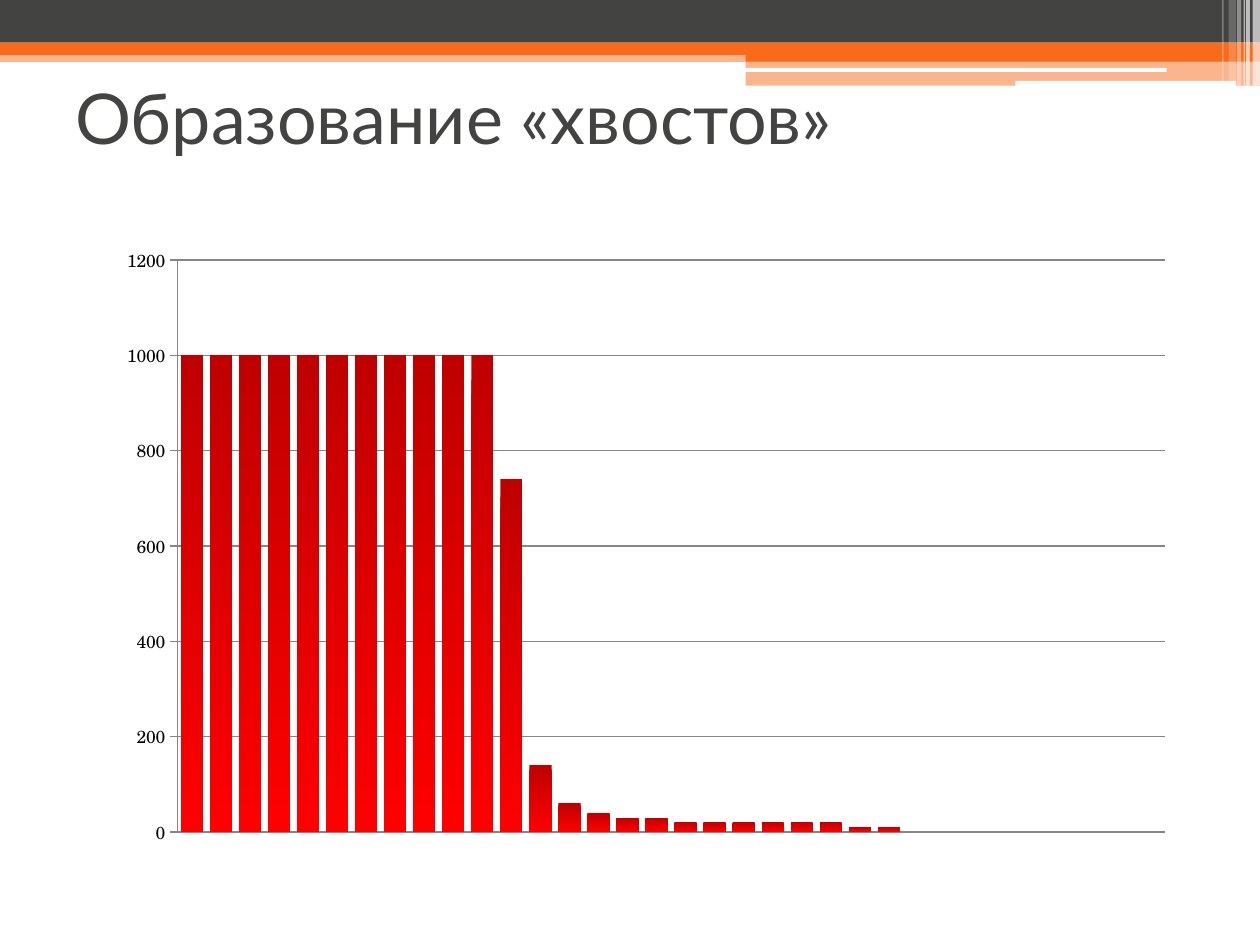
"""Build a slide with a banded header, a title and a long-tail column chart."""
from dataclasses import dataclass

import lxml.etree
import pptx
import pptx.chart.data
import pptx.dml.color
import pptx.enum.chart
import pptx.enum.shapes
import pptx.enum.text
import pptx.oxml
import pptx.oxml.ns
import pptx.util

Cm = pptx.util.Cm
qn = pptx.oxml.ns.qn

COLORS = {
    "dark": "434342",
    "orange": "F96A1B",
    "white": "FFFFFF",
    "black": "000000",
    "grid": "868686",
    "bar_top": "C00000",
    "bar_bottom": "FF0000",
}
SLIDE_WIDTH, SLIDE_HEIGHT = 25.4, 19.05
PANEL_LEFT = 15.03
PANEL_WIDTH = SLIDE_WIDTH - PANEL_LEFT
TITLE_FONT, CHART_FONT = "Lato", "TeX Gyre Schola"
VALUES = [1000] * 11 + [740, 140, 60, 40, 30, 30] + [20] * 6 + [10] * 2 + [0] * 9
PLOT_PERCENT = {"x": 9.2, "y": 5.6, "w": 88, "h": 83.3}


@dataclass
class Band:
    left: float
    top: float
    width: float
    height: float
    color: str
    opacity: int = 100
    rounded: bool = False


BANDS = [
    Band(0, 1.02, SLIDE_WIDTH, 0.23, "orange", 50),
    Band(0, 0, SLIDE_WIDTH, 0.86, "dark"),
    Band(0, 0.86, SLIDE_WIDTH, 0.25, "orange"),
    Band(PANEL_LEFT, 0.99, PANEL_WIDTH, 0.25, "orange"),
    Band(PANEL_LEFT, 1.22, PANEL_WIDTH, 0.51, "orange", 50),
    Band(15.01, 1.37, 8.51, 0.08, "white", rounded=True),
    Band(20.47, 1.63, 4.45, 0.1, "white", rounded=True),
    Band(25.25, 0, 0.15, 1.73, "white", 65),
    Band(25.12, 0, 0.08, 1.73, "white", 65),
    Band(25.07, 0, 0.03, 1.73, "white", 60),
    Band(24.94, 0, 0.08, 1.73, "white", 40),
    Band(24.77, 0, 0.15, 1.63, "white", 20),
    Band(24.64, 0, 0.03, 1.63, "white", 30),
]


def rgb(name: str) -> pptx.dml.color.RGBColor:
    """Return the named colour."""
    return pptx.dml.color.RGBColor.from_string(COLORS[name])


def draw_band(slide: pptx.slide.Slide, band: Band) -> None:
    """Draw one header band."""
    kinds = pptx.enum.shapes.MSO_SHAPE
    shape = slide.shapes.add_shape(
        kinds.ROUNDED_RECTANGLE if band.rounded else kinds.RECTANGLE,
        Cm(band.left), Cm(band.top), Cm(band.width), Cm(band.height))
    shape.shadow.inherit = False
    shape.line.fill.background()
    shape.fill.solid()
    shape.fill.fore_color.rgb = rgb(band.color)
    if band.opacity < 100:
        color = shape.fill._xPr.find(".//" + qn("a:srgbClr"))
        lxml.etree.SubElement(color, qn("a:alpha")).set("val", str(band.opacity * 1000))


def add_title(slide: pptx.slide.Slide, text: str) -> None:
    """Add the slide title."""
    shape = slide.shapes.add_textbox(Cm(1.27), Cm(0.76), Cm(22.86), Cm(3.18))
    frame = shape.text_frame
    frame.word_wrap = True
    frame.vertical_anchor = pptx.enum.text.MSO_ANCHOR.MIDDLE
    paragraph = frame.paragraphs[0]
    paragraph.text = text
    paragraph.font.name = TITLE_FONT
    paragraph.font.size = pptx.util.Pt(40)
    paragraph.font.color.rgb = rgb("dark")


def set_plot_layout(chart: pptx.chart.chart.Chart) -> None:
    """Fix the inner plot area within the chart."""
    plot_area = chart._chartSpace.find(".//" + qn("c:plotArea"))
    layout = plot_area.find(qn("c:layout"))
    if layout is None:
        layout = plot_area.makeelement(qn("c:layout"))
        plot_area.insert(0, layout)
    manual = lxml.etree.SubElement(layout, qn("c:manualLayout"))
    fractions = {name: percent / 100 for name, percent in PLOT_PERCENT.items()}
    settings = {"layoutTarget": "inner", "xMode": "edge", "yMode": "edge", **fractions}
    for name, value in settings.items():
        lxml.etree.SubElement(manual, qn(f"c:{name}")).set("val", str(value))


def add_tail_chart(slide: pptx.slide.Slide) -> None:
    """Add the column chart with its long tail."""
    data = pptx.chart.data.CategoryChartData()
    data.categories = [str(number) for number in range(1, len(VALUES) + 1)]
    data.add_series("Series 1", VALUES)
    chart = slide.shapes.add_chart(
        pptx.enum.chart.XL_CHART_TYPE.COLUMN_CLUSTERED,
        Cm(1.5), Cm(4.47), Cm(22.61), Cm(13.84), data).chart
    chart.has_legend = False
    chart.has_title = False
    chart.font.name = CHART_FONT
    chart.font.size = pptx.util.Pt(10)
    chart.font.color.rgb = rgb("black")
    chart.category_axis.visible = False

    axis = chart.value_axis
    axis.minimum_scale, axis.maximum_scale, axis.major_unit = 0, 1200, 200
    axis.major_tick_mark = pptx.enum.chart.XL_TICK_MARK.OUTSIDE
    axis.has_major_gridlines = True
    for line in (axis.format.line, axis.major_gridlines.format.line):
        line.color.rgb = rgb("grid")
        line.width = pptx.util.Pt(0.75)

    plot = chart.plots[0]
    plot.vary_by_categories = False
    plot.gap_width = 31
    fill = plot.series[0].format.fill
    fill.gradient()
    fill.gradient_angle = 270
    stops = ((0.02, "bar_top"), (1, "bar_bottom"))
    for stop, (position, color) in zip(fill.gradient_stops, stops):
        stop.position = position
        stop.color.rgb = rgb(color)
    set_plot_layout(chart)


def main() -> None:
    """Build and save the presentation."""
    presentation = pptx.Presentation()
    presentation.slide_width = Cm(SLIDE_WIDTH)
    presentation.slide_height = Cm(SLIDE_HEIGHT)
    slide = presentation.slides.add_slide(presentation.slide_layouts[6])
    for band in BANDS:
        draw_band(slide, band)
    add_title(slide, "Образование «хвостов»")
    add_tail_chart(slide)
    presentation.save("out.pptx")


if __name__ == "__main__":
    main()
